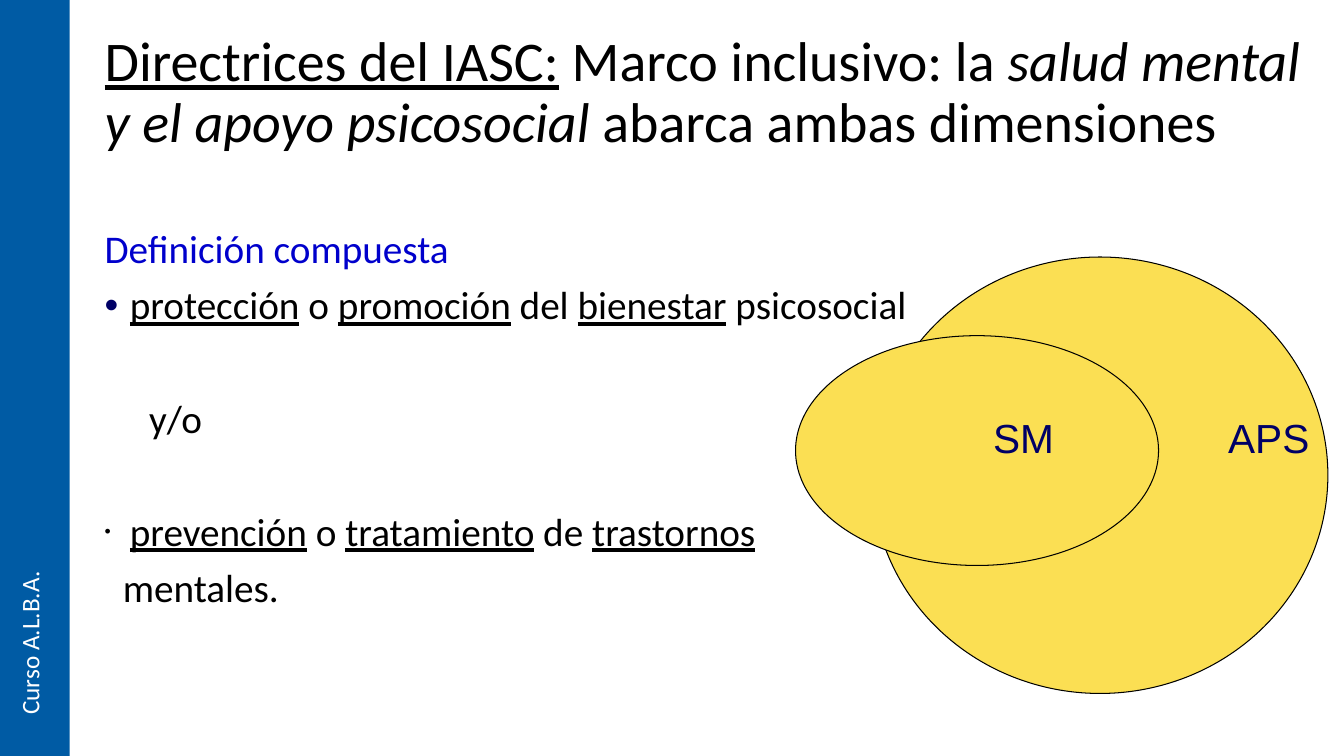
from lxml import etree
from pptx import Presentation, util as u
from pptx.dml.color import RGBColor
from pptx.enum import shapes, text
from pptx.oxml import ns

deck = Presentation()
deck.slide_width, deck.slide_height = u.Inches(13.33), u.Inches(7.5)
page = deck.slides.add_slide(deck.slide_layouts[6])


def colour(code):
    return RGBColor.from_string(code)


def area(left, top, width, height):
    """Turn percentages of the slide into left, top, width, height."""
    wide, high = deck.slide_width / 100, deck.slide_height / 100
    return [round(n) for n in (left * wide, top * high, width * wide, height * high)]


# Overlapping ellipses and side bar, from back to front
OVAL, BAR = shapes.MSO_SHAPE.OVAL, shapes.MSO_SHAPE.RECTANGLE
for kind, place, fill, line in [
    (OVAL, (64.89, 34, 33.91, 57.73), "FBDF53", "000000"),
    (OVAL, (59.19, 44.4, 27.01, 30.4), "FBDF53", "000000"),
    (BAR, (0, 0, 5.18, 100), "005BA4", None),
]:
    shape = page.shapes.add_shape(kind, *area(*place))
    shape.shadow.inherit = False
    shape.fill.solid()
    shape.fill.fore_color.rgb = colour(fill)
    if line:
        shape.line.color.rgb = colour(line)
        shape.line.width = u.Pt(0.75)
    else:
        shape.line.fill.background()

# Title: plain, underlined and italic spans
box = page.shapes.add_textbox(*area(7.05, 1.07, 91.75, 22.67))
box.text_frame.word_wrap = True
box.text_frame.vertical_anchor = text.MSO_ANCHOR.MIDDLE
para = box.text_frame.paragraphs[0]
para.line_spacing = 0.9
for words, style in [
    ("Directrices del IASC:", "underline"),
    (" Marco inclusivo: la ", None),
    ("salud mental y el apoyo psicosocial", "italic"),
    (" abarca ambas dimensiones", None),
]:
    span = para.add_run()
    span.text = words
    span.font.name, span.font.size = "Calibri", u.Pt(40)
    span.font.color.rgb = colour("000000")
    span.font.underline = style == "underline"
    span.font.italic = style == "italic"

# Definition: plain and underlined spans alternate, starting with plain
# Each row: spans, colour, left margin, space before, bullet (colour, size in %)
definition = [
    (["Definición compuesta"], "0000CC", 0, 10, None),
    (["", "protección", " o ", "promoción", " del ", "bienestar", " psicosocial"],
     "000000", 0.25, 10, ("000066", 100)),
    (["y/o"], "000000", 0.44, 51, None),
    (["", "prevención", " o ", "tratamiento", " de ", "trastornos"],
     "000000", 0.25, 50, ("000000", 45)),
    (["mentales."], "000000", 0.18, 10, None),
]
box = page.shapes.add_textbox(*area(7.05, 29.73, 90.7, 60))
frame = box.text_frame
frame.word_wrap = True
for row, (spans, ink, margin, before, bullet) in enumerate(definition):
    para = frame.add_paragraph() if row else frame.paragraphs[0]
    para.line_spacing = 0.9
    para.space_before = u.Pt(before)
    for index, words in enumerate(spans):
        if words:
            span = para.add_run()
            span.text = words
            span.font.name, span.font.size = "Calibri", u.Pt(28)
            span.font.color.rgb = colour(ink)
            span.font.underline = index % 2 == 1
    props = para._p.get_or_add_pPr()
    props.set("marL", str(u.Inches(margin)))
    if bullet:
        props.set("indent", str(-u.Inches(margin)))
        tint = etree.SubElement(props, ns.qn("a:buClr"))
        etree.SubElement(tint, ns.qn("a:srgbClr"), val=bullet[0])
        etree.SubElement(props, ns.qn("a:buSzPct"), val=str(bullet[1] * 1000))
        etree.SubElement(props, ns.qn("a:buFont"), typeface="Arial")
        etree.SubElement(props, ns.qn("a:buChar"), char="•")

# Ellipse labels and the upright course name
for words, place, font, size, ink, upright in [
    ("SM", (73.07, 53.87, 6.75, 8), "Arial", 29, "000066", False),
    ("APS", (90.55, 53.87, 8.25, 8), "Arial", 29, "000066", False),
    ("Curso A.L.B.A.", (0.68, 74.8, 3.75, 21.07), "Calibri", 18, "FFFFFF", True),
]:
    box = page.shapes.add_textbox(*area(*place))
    frame = box.text_frame
    frame.text = words
    frame.word_wrap = False
    span = frame.paragraphs[0].runs[0]
    span.font.name, span.font.size = font, u.Pt(size)
    span.font.color.rgb = colour(ink)
    if upright:
        frame._txBody.bodyPr.set("vert", "vert270")
    else:
        frame.margin_left = frame.margin_right = u.Inches(0.11)
        frame.margin_top = frame.margin_bottom = u.Inches(0.06)

deck.save("out.pptx")
